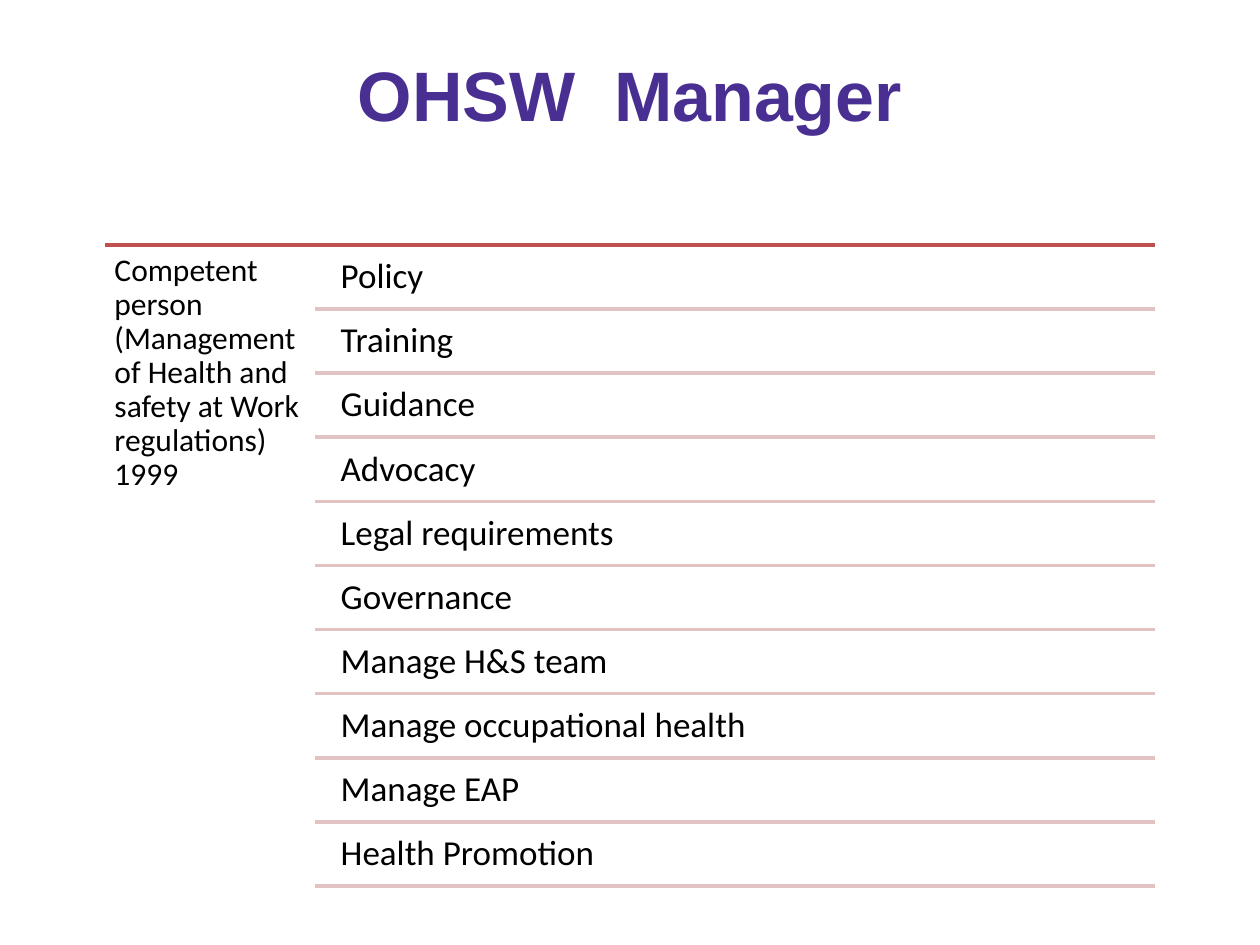
from typing import NamedTuple

from lxml import etree
from pptx import Presentation
from pptx import util as u
from pptx.dml.color import RGBColor
from pptx.enum import shapes, text
from pptx.oxml import ns

PURPLE = RGBColor(0x49, 0x2F, 0x92)
RED = RGBColor(0xC0, 0x50, 0x4D)
PINK = RGBColor(0xE2, 0xC2, 0xC2)
BLACK = RGBColor(0, 0, 0)


class Area(NamedTuple):
    left: float
    top: float
    width: float
    height: float


# Layout in points
LIST_TOP = 139.9
LIST_LEFT, LIST_MIDDLE, LIST_RIGHT = 60, 180, 660
ROW_STEP = 36.64
ROW_GAP = 1.75
ROW_HEIGHT = 34.9
ROW_INDENT = 8.7

DUTIES = [
    "Policy", "Training", "Guidance", "Advocacy", "Legal requirements",
    "Governance", "Manage H&S team", "Manage occupational health",
    "Manage EAP", "Health Promotion",
]


def add_text(page, wording: str, area: Area, *, size: float, font: str = "Calibri",
             color: RGBColor = BLACK, bold: bool = False, inset: float = 5.4,
             top_inset: float | None = None, spacing: float = 0.9,
             align=text.PP_ALIGN.LEFT) -> None:
    box = page.shapes.add_textbox(*(u.Pt(length) for length in area))
    frame = box.text_frame
    frame.word_wrap = True
    frame.vertical_anchor = text.MSO_ANCHOR.TOP
    frame.margin_left = frame.margin_right = frame.margin_bottom = u.Pt(inset)
    frame.margin_top = u.Pt(inset if top_inset is None else top_inset)
    para = frame.paragraphs[0]
    para.alignment = align
    para.line_spacing = spacing
    span = para.add_run()
    span.text = wording
    span.font.name = font
    span.font.size = u.Pt(size)
    span.font.bold = bold
    span.font.color.rgb = color


def add_rule(page, left: float, right: float, y: float, color: RGBColor) -> None:
    rule = page.shapes.add_connector(
        shapes.MSO_CONNECTOR.STRAIGHT, u.Pt(left), u.Pt(y), u.Pt(right), u.Pt(y))
    rule.line.color.rgb = color
    rule.line.width = u.Pt(2)
    etree.SubElement(rule._element.spPr, ns.qn("a:effectLst"))


def main() -> None:
    deck = Presentation()
    deck.slide_width, deck.slide_height = u.Pt(720), u.Pt(540)
    page = deck.slides.add_slide(deck.slide_layouts[6])

    # Title
    add_text(page, "OHSW  Manager", Area(36, 21.6, 648, 106.6), size=40,
             font="Arial", color=PURPLE, bold=True, inset=7.2, top_inset=8,
             spacing=1, align=text.PP_ALIGN.CENTER)

    # Heading column
    add_rule(page, LIST_LEFT, LIST_RIGHT, LIST_TOP, RED)
    add_text(page, "Competent person (Management of Health and safety at Work regulations) 1999",
             Area(LIST_LEFT, LIST_TOP, LIST_MIDDLE - LIST_LEFT, 368.6), size=18)

    # Duties, each with a rule below
    row_left = LIST_MIDDLE + ROW_INDENT
    for index, duty in enumerate(DUTIES):
        top = LIST_TOP + ROW_GAP + index * ROW_STEP
        add_text(page, duty, Area(row_left, top, LIST_RIGHT - row_left, ROW_HEIGHT),
                 size=20, inset=6)
        add_rule(page, LIST_MIDDLE, LIST_RIGHT, top + ROW_HEIGHT, PINK)

    deck.save("out.pptx")


if __name__ == "__main__":
    main()
